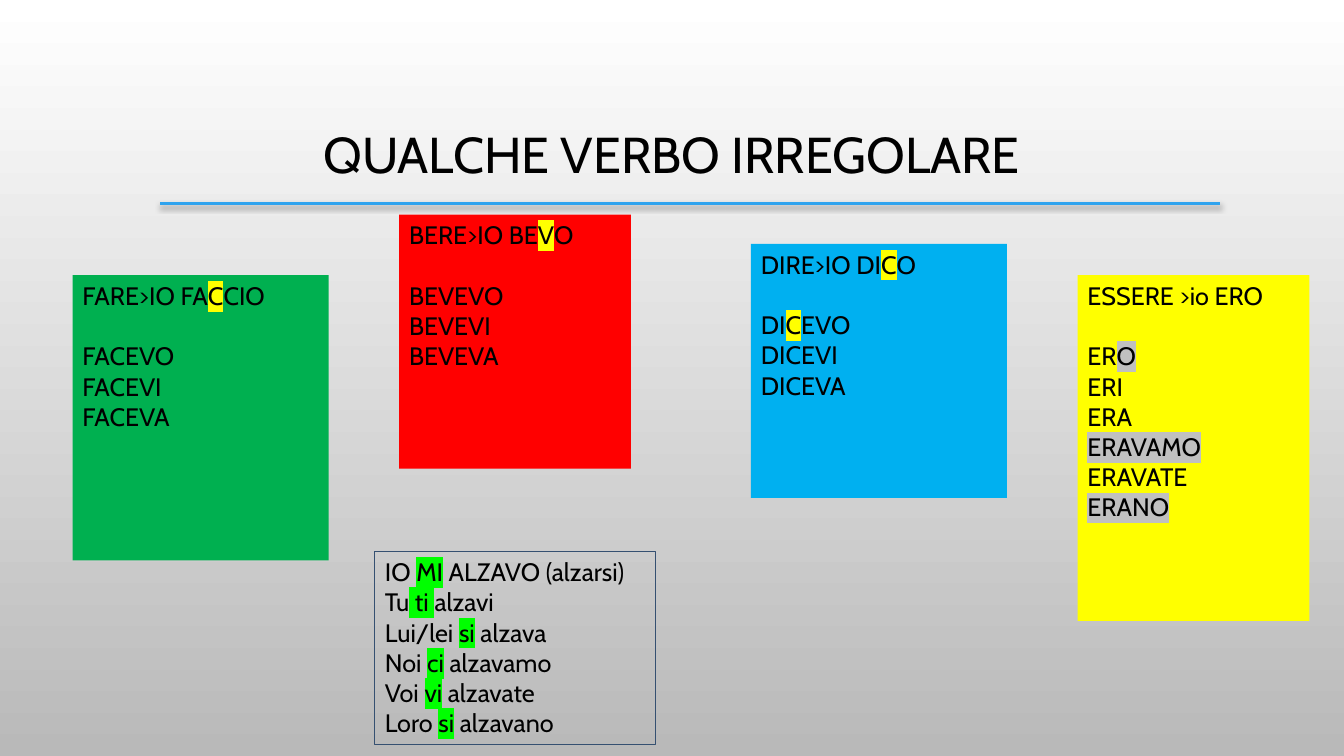
from dataclasses import dataclass

from lxml import etree
from pptx import Presentation
from pptx.dml.color import RGBColor
from pptx.enum import shapes, text
from pptx.oxml import ns
from pptx.util import Pt

# Content: text between bars is highlighted
TITLE = "QUALCHE VERBO IRREGOLARE"

# (left, top, width, height), fill, highlight, heading, forms
VERBS = [
    ((51.84, 196.56, 182.88, 203.76), "00B050", "FFFF00",
     "FARE>IO FA|C|CIO", ["FACEVO", "FACEVI", "FACEVA"]),
    ((285.12, 153.36, 165.6, 181.44), "FF0000", "FFFF00",
     "BERE>IO BE|V|O", ["BEVEVO", "BEVEVI", "BEVEVA"]),
    ((536.4, 174.24, 182.88, 181.44), "00B0F0", "FFFF00",
     "DIRE>IO DI|C|O", ["DI|C|EVO", "DICEVI", "DICEVA"]),
    ((769.68, 196.56, 165.6, 246.96), "FFFF00", "C0C0C0",
     "ESSERE >io ERO",
     ["ER|O|", "ERI", "ERA", "|ERAVAMO|", "ERAVATE", "|ERANO|"]),
]
REFLEXIVE_PLACE = (267.84, 393.84, 200.16, 138.24)
REFLEXIVE = [
    "IO |MI| ALZAVO (alzarsi)",
    "Tu| ti |alzavi",
    "Lui/lei |si| alzava",
    "Noi |ci| alzavamo",
    "Voi |vi| alzavate",
    "Loro |si| alzavano",
]


@dataclass
class Theme:
    font: str = "Cabin"
    ink: str = "000000"
    title_size: int = 36
    body_size: int = 18
    heading_gap: float = 21.6
    page_top: str = "FFFFFF"
    page_bottom: str = "B9B9B9"
    rule: str = "2FA3EE"
    frame: str = "355071"
    reflexive_mark: str = "00FF00"


theme = Theme()


def color(value):
    return RGBColor.from_string(value)


def points(values):
    return [Pt(value) for value in values]


def style(para, size):
    para.font.name = theme.font
    para.font.size = Pt(size)
    para.font.color.rgb = color(theme.ink)


def highlight(span, value):
    mark = etree.SubElement(span.font._element, ns.qn("a:highlight"))
    etree.SubElement(mark, ns.qn("a:srgbClr"), val=value)


def write_lines(frame, lines, mark):
    for index, line in enumerate(lines):
        para = frame.add_paragraph() if index else frame.paragraphs[0]
        para.alignment = text.PP_ALIGN.LEFT
        style(para, theme.body_size)
        for part, words in enumerate(line.split("|")):
            if words:
                span = para.add_run()
                span.text = words
                if part % 2:
                    highlight(span, mark)


def add_card(page, place, lines, mark, fill=None):
    box = page.shapes.add_shape(shapes.MSO_SHAPE.RECTANGLE, *points(place))
    box.shadow.inherit = False
    if fill:
        box.fill.solid()
        box.fill.fore_color.rgb = color(fill)
        box.line.fill.background()
    else:
        box.fill.background()
        box.line.color.rgb = color(theme.frame)
        box.line.width = Pt(0.75)
    frame = box.text_frame
    frame.word_wrap = True
    frame.vertical_anchor = text.MSO_ANCHOR.TOP
    write_lines(frame, lines, mark)
    return frame


deck = Presentation()
deck.slide_width, deck.slide_height = Pt(960), Pt(540)
page = deck.slides.add_slide(deck.slide_layouts[6])

# Background
backdrop = page.background.fill
backdrop.gradient()
backdrop.gradient_angle = 270
for stop, value in zip(backdrop.gradient_stops, (theme.page_top, theme.page_bottom)):
    stop.color.rgb = color(value)

# Rule under the title, with a soft shadow
rule = page.shapes.add_connector(
    shapes.MSO_CONNECTOR.STRAIGHT, *points((114.48, 145.44, 871.2, 145.44)))
rule.line.color.rgb = color(theme.rule)
rule.line.width = Pt(2.5)
effects = etree.SubElement(rule._element.spPr, ns.qn("a:effectLst"))
shadow = etree.SubElement(effects, ns.qn("a:outerShdw"), blurRad=str(Pt(4)),
                          dist=str(Pt(2)), dir="5400000", rotWithShape="0")
shade = etree.SubElement(shadow, ns.qn("a:srgbClr"), val=theme.ink)
etree.SubElement(shade, ns.qn("a:alpha"), val="28000")

# Title
title = page.shapes.add_textbox(*points((72, 48.96, 815.76, 126))).text_frame
title.word_wrap = True
title.vertical_anchor = text.MSO_ANCHOR.MIDDLE
heading = title.paragraphs[0]
heading.text = TITLE
heading.alignment = text.PP_ALIGN.CENTER
heading.line_spacing = 0.9
style(heading, theme.title_size)

# Verb cards: a gap parts the heading from the forms
for place, fill, mark, verb, forms in VERBS:
    frame = add_card(page, place, [verb] + forms, mark, fill)
    frame.paragraphs[1].space_before = Pt(theme.heading_gap)

# Reflexive verb
add_card(page, REFLEXIVE_PLACE, REFLEXIVE, theme.reflexive_mark)

deck.save("out.pptx")
